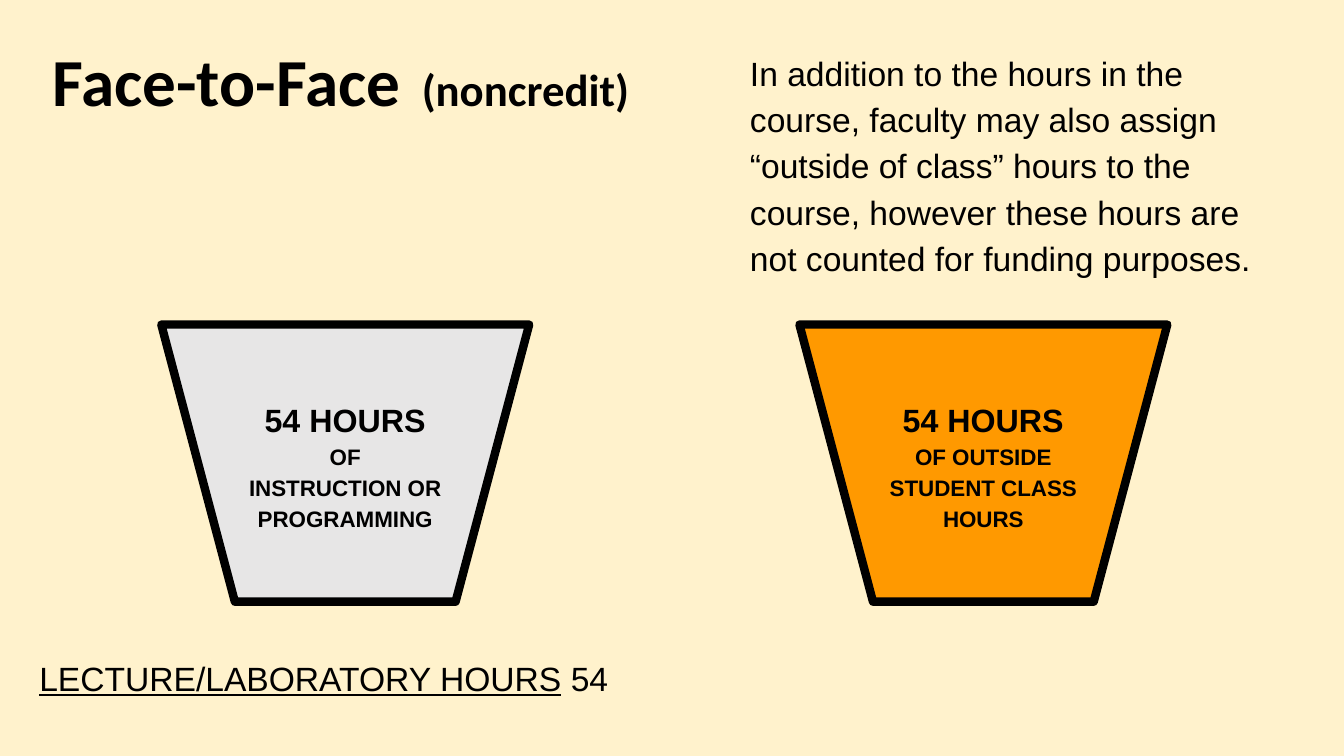
"""Build the slide on face-to-face noncredit hours."""
from lxml import etree
from pptx import Presentation
from pptx.dml.color import RGBColor
from pptx.enum import shapes, text
from pptx.oxml import ns
from pptx.util import Pt

CREAM = RGBColor(0xFF, 0xF2, 0xCC)
GREY = RGBColor(0xE7, 0xE6, 0xE6)
ORANGE = RGBColor(0xFF, 0x99, 0x00)
BLACK = RGBColor(0, 0, 0)


def prepare(box, anchor):
    frame = box.text_frame
    frame.word_wrap = True
    frame.auto_size = text.MSO_AUTO_SIZE.NONE
    frame.vertical_anchor = anchor
    frame.margin_left = frame.margin_right = Pt(9.4)
    frame.margin_top = frame.margin_bottom = Pt(9.4)
    return frame


def add_span(para, words, size, bold=False, face="Arial"):
    span = para.add_run()
    span.text = words
    span.font.name = face
    span.font.size = Pt(size)
    span.font.bold = bold
    span.font.color.rgb = BLACK
    return span


deck = Presentation()
deck.slide_width, deck.slide_height = Pt(960), Pt(540)
page = deck.slides.add_slide(deck.slide_layouts[5])
page.background.fill.solid()
page.background.fill.fore_color.rgb = CREAM

title = page.shapes.title
title.left, title.top, title.width, title.height = Pt(28), Pt(37.4), Pt(448), Pt(57.6)
para = prepare(title, text.MSO_ANCHOR.BOTTOM).paragraphs[0]
para.alignment = text.PP_ALIGN.LEFT
add_span(para, "Face-to-Face", 48, True, "Calibri")
gap = add_span(para, " ", 48, True, "Calibri")
gap.font._element.set("spc", "430")
add_span(para, "(noncredit)", 32, True, "Calibri")

buckets = [
    (115.2, GREY, [[("54 HOURS", 23)], [("OF", 16)], [("INSTRUCTION OR PROGRAMMING", 16)]]),
    (571, ORANGE, [[("54 HOURS", 23), (" OF OUTSIDE STUDENT CLASS HOURS", 16)]]),
]
for left, color, lines in buckets:
    bucket = page.shapes.add_shape(
        shapes.MSO_SHAPE.FLOWCHART_MANUAL_OPERATION, Pt(left), Pt(231.8), Pt(262.8), Pt(198))
    bucket.shadow.inherit = False
    bucket.fill.solid()
    bucket.fill.fore_color.rgb = color
    bucket.line.color.rgb = BLACK
    bucket.line.width = Pt(6)
    etree.SubElement(bucket.line._get_or_add_ln(), ns.qn("a:round"))
    frame = prepare(bucket, text.MSO_ANCHOR.MIDDLE)
    for number, line in enumerate(lines):
        para = frame.add_paragraph() if number else frame.paragraphs[0]
        para.alignment = text.PP_ALIGN.CENTER
        para.line_spacing = 1.15
        for words, size in line:
            add_span(para, words, size, True)

notes = [
    (526.3, 23.8, 401, 140.4, text.MSO_ANCHOR.TOP,
     [("In addition to the hours in the course, faculty may also assign “outside of class” "
       "hours to the course, however these hours are not counted for funding purposes.", False)]),
    (18.7, 460, 455.8, 44, text.MSO_ANCHOR.MIDDLE,
     [("LECTURE/LABORATORY HOURS", True), (" 54", False)]),
]
for left, top, width, height, anchor, spans in notes:
    box = page.shapes.add_textbox(Pt(left), Pt(top), Pt(width), Pt(height))
    para = prepare(box, anchor).paragraphs[0]
    para.line_spacing = 1.15
    for words, underlined in spans:
        add_span(para, words, 24).font.underline = underlined

deck.save("out.pptx")
